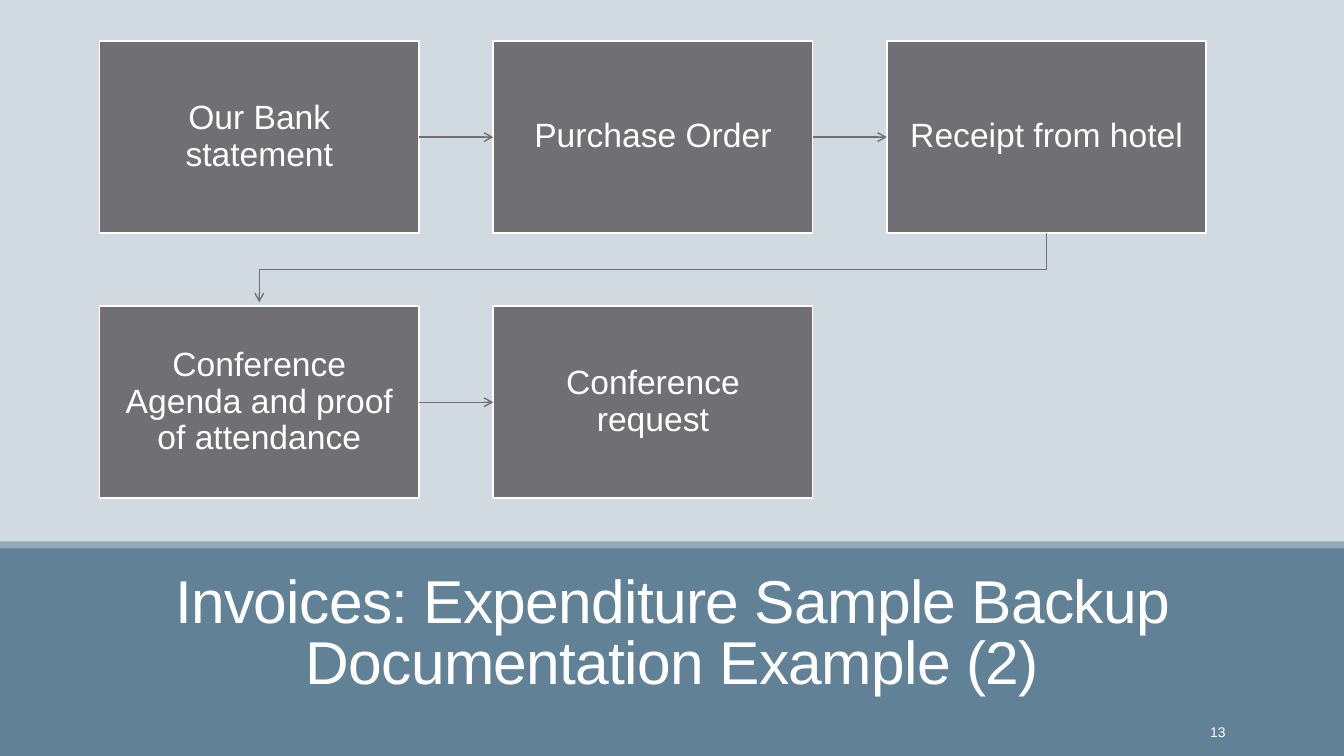
from itertools import pairwise

from lxml.etree import SubElement
from pptx import Presentation
from pptx.dml.color import RGBColor
from pptx.enum.shapes import MSO_CONNECTOR, MSO_SHAPE
from pptx.enum.text import MSO_ANCHOR, MSO_AUTO_SIZE, PP_ALIGN
from pptx.oxml.ns import qn
from pptx.util import Cm, Pt

COLORS = {
    "background": "D1D9E1",
    "band": "618197",
    "strip": "92A9B9",
    "box": "6F6F74",
    "white": "FFFFFF",
}
FONT = "Arial"
SLIDE_WIDTH, SLIDE_HEIGHT = 33.87, 19.05
BAND_TOP = 13.77
STEPS = [
    "Our Bank statement",
    "Purchase Order",
    "Receipt from hotel",
    "Conference Agenda and proof of attendance",
    "Conference request",
]
COLUMNS = 3
BOX_WIDTH, BOX_HEIGHT = 8.05, 4.83
COLUMN_STEP, ROW_STEP = 9.92, 6.68
ARROW_GAP = 0.1


def color(name):
    return RGBColor.from_string(COLORS[name])


def write_text(shape, text, size, alignment, line_spacing=1.0):
    """Write one white paragraph, centred vertically, and return its run."""
    frame = shape.text_frame
    frame.word_wrap = True
    frame.auto_size = MSO_AUTO_SIZE.NONE
    frame.vertical_anchor = MSO_ANCHOR.MIDDLE
    paragraph = frame.paragraphs[0]
    paragraph.alignment = alignment
    paragraph.line_spacing = line_spacing
    run = paragraph.add_run()
    run.text = text
    run.font.name = FONT
    run.font.size = Pt(size)
    run.font.color.rgb = color("white")
    return run


def add_rectangle(slide, left, top, width, height, fill):
    shape = slide.shapes.add_shape(
        MSO_SHAPE.RECTANGLE, Cm(left), Cm(top), Cm(width), Cm(height))
    shape.shadow.inherit = False
    shape.fill.solid()
    shape.fill.fore_color.rgb = color(fill)
    shape.line.fill.background()
    return shape


def add_step(slide, left, top, text):
    box = add_rectangle(slide, left, top, BOX_WIDTH, BOX_HEIGHT, "box")
    box.line.color.rgb = color("white")
    box.line.width = Pt(1.25)
    frame = box.text_frame
    frame.margin_left = frame.margin_right = Cm(0.48)
    frame.margin_top = frame.margin_bottom = Cm(0.48)
    write_text(box, text, 24, PP_ALIGN.CENTER, 0.9)
    return box


def style_arrow(arrow):
    arrow.line.color.rgb = color("box")
    arrow.line.width = Pt(1)
    properties = arrow.element.spPr
    SubElement(properties.find(qn("a:ln")), qn("a:tailEnd"), type="arrow")


def add_straight_arrow(slide, start, end):
    arrow = slide.shapes.add_connector(MSO_CONNECTOR.STRAIGHT, 0, 0, 0, 0)
    arrow.begin_connect(start, 3)
    arrow.end_connect(end, 1)
    style_arrow(arrow)
    SubElement(arrow.element.spPr, qn("a:effectLst"))


def add_row_arrow(slide, start, end):
    """Lead from the end of one row down to the start of the next."""
    start_x = start.left + start.width // 2
    end_x = end.left + end.width // 2
    bottom = start.top + start.height
    middle = (bottom + end.top) // 2
    builder = slide.shapes.build_freeform(start_x, bottom)
    builder.add_line_segments(
        [(start_x, middle), (end_x, middle), (end_x, end.top - Cm(ARROW_GAP))],
        close=False)
    arrow = builder.convert_to_shape()
    arrow.shadow.inherit = False
    arrow.fill.background()
    style_arrow(arrow)


def add_flow(slide, left, top):
    boxes = []
    for index, text in enumerate(STEPS):
        row, column = divmod(index, COLUMNS)
        boxes.append(add_step(slide, left + column * COLUMN_STEP,
                              top + row * ROW_STEP, text))
    for start, end in pairwise(boxes):
        if start.top == end.top:
            add_straight_arrow(slide, start, end)
        else:
            add_row_arrow(slide, start, end)


def add_title_band(slide, top, number):
    band = add_rectangle(slide, 0, top, SLIDE_WIDTH, SLIDE_HEIGHT - top, "band")
    strip = add_rectangle(slide, 0, top - 0.13, SLIDE_WIDTH, 0.18, "strip")

    title = slide.shapes.title
    title.element.addprevious(band.element)
    title.element.addprevious(strip.element)
    title.left, title.top = Cm(2.97), Cm(top + 0.81)
    title.width, title.height = Cm(27.94), Cm(2.87)
    run = write_text(
        title, "Invoices: Expenditure Sample Backup Documentation Example (2)",
        43.2, PP_ALIGN.CENTER, 0.85)
    run.font._element.set("spc", "-50")

    number_box = slide.shapes.add_textbox(
        Cm(27.51), Cm(top + 4.16), Cm(3.63), Cm(1.02))
    write_text(number_box, number, 10, PP_ALIGN.RIGHT)


def main():
    presentation = Presentation()
    presentation.slide_width = Cm(SLIDE_WIDTH)
    presentation.slide_height = Cm(SLIDE_HEIGHT)
    slide = presentation.slides.add_slide(presentation.slide_layouts[5])
    slide.background.fill.solid()
    slide.background.fill.fore_color.rgb = color("background")
    add_title_band(slide, BAND_TOP, "13")
    add_flow(slide, 2.51, 1.04)
    presentation.save("out.pptx")


if __name__ == "__main__":
    main()
